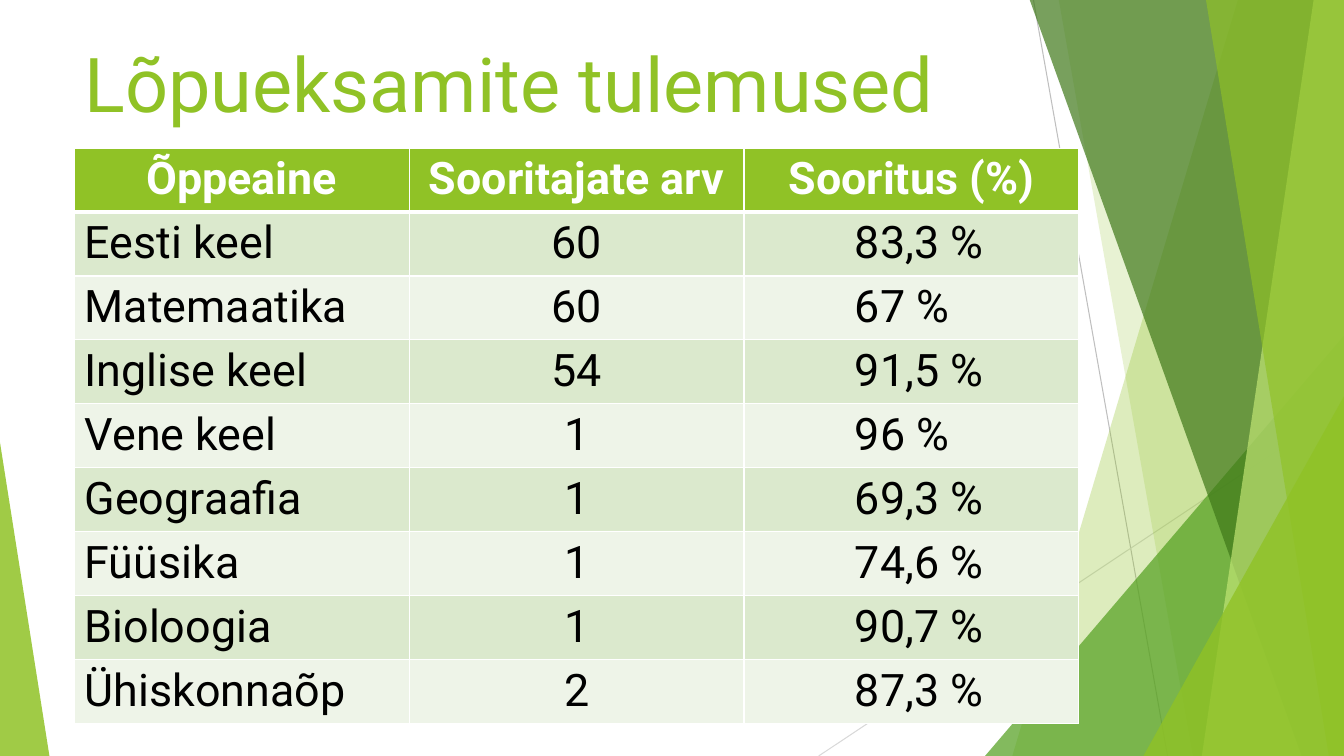
from dataclasses import dataclass

from lxml import etree
from pptx import Presentation
from pptx import util as u
from pptx.dml.color import RGBColor
from pptx.enum import shapes, text
from pptx.oxml.ns import qn

PX = 9144  # 100 px to the inch
W, H = 1333, 750
FONT = "Roboto"

GREEN = RGBColor(0x90, 0xC2, 0x26)
LEAF = RGBColor(0x54, 0xA0, 0x21)
FOREST = RGBColor(0x3F, 0x78, 0x19)
LIME = RGBColor(0xC0, 0xE4, 0x74)
BAND_DARK = RGBColor(0xDB, 0xE9, 0xCD)
BAND_LIGHT = RGBColor(0xEE, 0xF4, 0xE8)
GREY = RGBColor(0xBF, 0xBF, 0xBF)
PALE_GREY = RGBColor(0xD9, 0xD9, 0xD9)
WHITE = RGBColor(0xFF, 0xFF, 0xFF)
BLACK = RGBColor(0, 0, 0)


@dataclass
class Ray:
    start: tuple[int, int]
    end: tuple[int, int]
    color: RGBColor


@dataclass
class Facet:
    """Band reaching the right slide edge, with a slanted left side."""
    top_x: int
    bottom_x: int
    color: RGBColor
    alpha: int


@dataclass
class Corner:
    """Right triangle standing on the bottom edge; apex 0 is left, 1 is right."""
    x: int
    y: int
    w: int
    apex: int
    color: RGBColor
    alpha: int


RAYS = [Ray((1025, 0), (1158, H), GREY), Ray((W, 403), (812, H), PALE_GREY)]
PANELS = [
    Facet(1228, 1004, GREEN, 30),
    Facet(1050, 1183, GREEN, 20),
    Corner(977, 333, 356, 1, LEAF, 72),
    Facet(1021, 1291, FOREST, 70),
    Facet(1303, 1192, LIME, 70),
    Facet(1196, 1318, GREEN, 65),
    Corner(1134, 393, 199, 1, GREEN, 80),
    Corner(0, 439, 49, 0, GREEN, 85),
]

HEADER = ("Õppeaine", "Sooritajate arv", "Sooritus (%)")
RESULTS = [
    ("Eesti keel", "60", "83,3 %"),
    ("Matemaatika", "60", "67 %"),
    ("Inglise keel", "54", "91,5 %"),
    ("Vene keel", "1", "96 %"),
    ("Geograafia", "1", "69,3 %"),
    ("Füüsika", "1", "74,6 %"),
    ("Bioloogia", "1", "90,7 %"),
    ("Ühiskonnaõp", "2", "87,3 %"),
]


def add_ray(s, ray: Ray) -> None:
    points = [v * PX for v in ray.start + ray.end]
    ln = s.shapes.add_connector(shapes.MSO_CONNECTOR.STRAIGHT, *points)
    ln.line.color.rgb = ray.color
    ln.line.width = u.Pt(0.75)
    etree.SubElement(ln._element.spPr, qn("a:effectLst"))


def add_panel(s, panel: Facet | Corner) -> None:
    if isinstance(panel, Facet):
        fb = s.shapes.build_freeform(panel.top_x, -1, scale=PX)
        fb.add_line_segments([(W, -1), (W, H), (panel.bottom_x, H)], close=True)
        sp = fb.convert_to_shape()
    else:
        box = [v * PX for v in (panel.x, panel.y, panel.w, H - panel.y)]
        sp = s.shapes.add_shape(shapes.MSO_SHAPE.ISOSCELES_TRIANGLE, *box)
        sp.adjustments[0] = panel.apex
    sp.shadow.inherit = False
    sp.line.fill.background()
    sp.fill.solid()
    sp.fill.fore_color.rgb = panel.color
    srgb = sp._element.spPr.find(".//" + qn("a:srgbClr"))
    etree.SubElement(srgb, qn("a:alpha"), val=str(panel.alpha * 1000))


def write(p, words: str, size: int, color: RGBColor, bold: bool = False) -> None:
    r = p.add_run()
    r.text = words
    for name, value in {"name": FONT, "size": u.Pt(size), "bold": bold}.items():
        setattr(r.font, name, value)
    r.font.color.rgb = color


def add_borders(cell, bottom_pt: int) -> None:
    tc_pr = cell._tc.get_or_add_tcPr()
    for side, width in {"L": 1, "R": 1, "T": 1, "B": bottom_pt}.items():
        ln = etree.SubElement(tc_pr, qn(f"a:ln{side}"), w=str(u.Pt(width)))
        fill = etree.SubElement(ln, qn("a:solidFill"))
        etree.SubElement(fill, qn("a:srgbClr"), val=str(WHITE))


def add_title(s) -> None:
    tb = s.shapes.add_textbox(*[v * PX for v in (74, 27, 940, 105)])
    tf = tb.text_frame
    tf.word_wrap = True
    tf.vertical_anchor = text.MSO_ANCHOR.BOTTOM
    write(tf.paragraphs[0], "Lõpueksamite tulemused", 54, GREEN)


def add_results(s) -> None:
    rows = [HEADER, *RESULTS]
    box = [v * PX for v in (74, 147, 995, 62 * len(rows))]
    table = s.shapes.add_table(len(rows), len(HEADER), *box).table
    for column in table.columns:
        column.width = 332 * PX
    for i, row in enumerate(rows):
        table.rows[i].height = 62 * PX
        is_header = i == 0
        band = GREEN if is_header else BAND_DARK if i % 2 else BAND_LIGHT
        for j, words in enumerate(row):
            cell = table.cell(i, j)
            add_borders(cell, 3 if is_header else 1)
            cell.fill.solid()
            cell.fill.fore_color.rgb = band
            p = cell.text_frame.paragraphs[0]
            write(p, words, 32, WHITE if is_header else BLACK, is_header)
            if is_header or j == 1:
                p.alignment = text.PP_ALIGN.CENTER
            elif j == 2:  # percentages line up one inch in
                p.level = 2
                p._p.get_or_add_pPr().set("marL", str(100 * PX))


def main() -> None:
    prs = Presentation()
    prs.slide_width, prs.slide_height = W * PX, H * PX
    s = prs.slides.add_slide(prs.slide_layouts[6])

    # Background decoration
    for ray in RAYS:
        add_ray(s, ray)
    for panel in PANELS:
        add_panel(s, panel)

    # Content
    add_title(s)
    add_results(s)
    prs.save("out.pptx")


if __name__ == "__main__":
    main()
